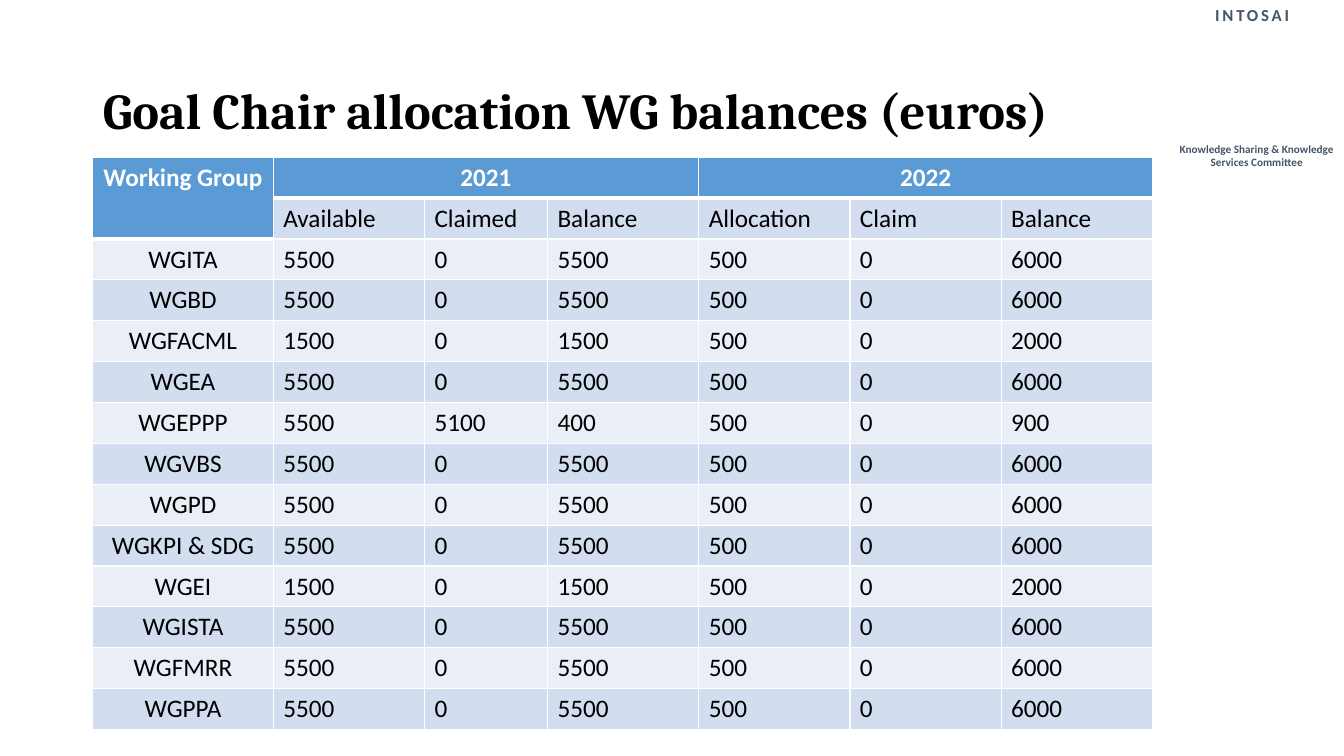
"""Build the slide of working group balances for 2021 and 2022."""
from dataclasses import dataclass

from lxml.etree import SubElement
from pptx import Presentation
from pptx.dml.color import RGBColor
from pptx.enum.text import MSO_ANCHOR, MSO_AUTO_SIZE, PP_ALIGN
from pptx.oxml.ns import qn
from pptx.util import Inches, Pt

TITLE = "Goal Chair allocation WG balances (euros)"
ORGANISATION = "INTOSAI"
COMMITTEE = "Knowledge Sharing & Knowledge Services Committee"
GROUP_HEADING = "Working Group"
YEARS = ("2021", "2022")
SUBHEADINGS = ("Available", "Claimed", "Balance", "Allocation", "Claim", "Balance")
ALLOCATION_2022, CLAIM_2022 = 500, 0
GROUPS = (
    ("WGITA", 5500, 0),
    ("WGBD", 5500, 0),
    ("WGFACML", 1500, 0),
    ("WGEA", 5500, 0),
    ("WGEPPP", 5500, 5100),
    ("WGVBS", 5500, 0),
    ("WGPD", 5500, 0),
    ("WGKPI & SDG", 5500, 0),
    ("WGEI", 1500, 0),
    ("WGISTA", 5500, 0),
    ("WGFMRR", 5500, 0),
    ("WGPPA", 5500, 0),
)
COLUMN_WIDTHS = (1.79, 1.5, 1.22, 1.5, 1.5, 1.5, 1.5)


@dataclass(frozen=True)
class Theme:
    """Colours, fonts and type sizes."""
    black: str = "000000"
    white: str = "FFFFFF"
    slate: str = "44546A"
    header: str = "5B9BD5"
    bands: tuple = ("EAEFF7", "D2DEEF")
    heading_font: str = "Cambria"
    body_font: str = "Calibri"
    title_size: int = 36
    table_size: int = 18
    organisation_size: int = 12
    committee_size: int = 8


THEME = Theme()


def write(frame, text, size, color, bold=False, font=THEME.body_font,
          align=PP_ALIGN.LEFT):
    """Put one formatted run in the first paragraph and return the run."""
    paragraph = frame.paragraphs[0]
    paragraph.alignment = align
    run = paragraph.add_run()
    run.text = text
    run.font.name, run.font.size, run.font.bold = font, Pt(size), bold
    run.font.color.rgb = RGBColor.from_string(color)
    return run


def add_label(slide, box, text, size):
    """Add a centred bold label and return its run."""
    frame = slide.shapes.add_textbox(*map(Inches, box)).text_frame
    frame.word_wrap = True
    frame.auto_size = MSO_AUTO_SIZE.SHAPE_TO_FIT_TEXT
    return write(frame, text, size, THEME.slate, True, align=PP_ALIGN.CENTER)


def style_cell(cell, fill, bottom_width=1):
    """Give a cell white borders and a solid fill."""
    properties = cell._tc.get_or_add_tcPr()
    for side in ("L", "R", "T", "B"):
        width = bottom_width if side == "B" else 1
        line = SubElement(properties, qn(f"a:ln{side}"), w=str(Pt(width)))
        solid = SubElement(line, qn("a:solidFill"))
        SubElement(solid, qn("a:srgbClr"), val=THEME.white)
    cell.fill.solid()
    cell.fill.fore_color.rgb = RGBColor.from_string(fill)


def group_row(group, available, claimed):
    """Work out both balances of a working group."""
    balance = available - claimed
    return (group, available, claimed, balance, ALLOCATION_2022, CLAIM_2022,
            balance + ALLOCATION_2022 - CLAIM_2022)


def add_balances(slide):
    """Add the table with its merged header and banded rows."""
    rows = [("",) + SUBHEADINGS] + [group_row(*group) for group in GROUPS]
    table = slide.shapes.add_table(
        len(rows) + 1, len(COLUMN_WIDTHS), Inches(0.92), Inches(1.56),
        Inches(sum(COLUMN_WIDTHS)), Inches(5.68)).table
    for column, width in zip(table.columns, COLUMN_WIDTHS):
        column.width = Inches(width)

    table.cell(0, 0).merge(table.cell(1, 0))
    headings = {0: GROUP_HEADING}
    for index, year in enumerate(YEARS):
        first = 1 + 3 * index
        table.cell(0, first).merge(table.cell(0, first + 2))
        headings[first] = year
    for column in range(len(COLUMN_WIDTHS)):
        style_cell(table.cell(0, column), THEME.header, 3)
    for column, heading in headings.items():
        write(table.cell(0, column).text_frame, heading, THEME.table_size,
              THEME.white, True, align=PP_ALIGN.CENTER)

    for row, values in enumerate(rows, 1):
        for column, value in enumerate(values):
            cell = table.cell(row, column)
            if cell.is_spanned:
                style_cell(cell, THEME.header, 3)
                continue
            style_cell(cell, THEME.bands[row % 2])
            write(cell.text_frame, str(value), THEME.table_size, THEME.black,
                  align=PP_ALIGN.LEFT if column else PP_ALIGN.CENTER)


def add_title(slide):
    """Place and fill the title placeholder."""
    title = slide.shapes.title
    title.left, title.top, title.width, title.height = map(
        Inches, (0.92, 0.4, 11.5, 1.45))
    frame = title.text_frame
    frame.auto_size = MSO_AUTO_SIZE.NONE
    frame.vertical_anchor = MSO_ANCHOR.MIDDLE
    frame.paragraphs[0].line_spacing = 0.9
    write(frame, TITLE, THEME.title_size, THEME.black, True, THEME.heading_font)


def main():
    """Build and save the presentation."""
    presentation = Presentation()
    presentation.slide_width, presentation.slide_height = Inches(13.33), Inches(7.5)
    slide = presentation.slides.add_slide(presentation.slide_layouts[5])
    organisation = add_label(slide, (11.62, 0, 1.6, 0.3), ORGANISATION,
                             THEME.organisation_size)
    organisation.font._element.set("spc", "200")
    add_label(slide, (11.43, 1.36, 2.07, 0.37), COMMITTEE, THEME.committee_size)
    add_title(slide)
    add_balances(slide)
    presentation.save("out.pptx")


if __name__ == "__main__":
    main()
